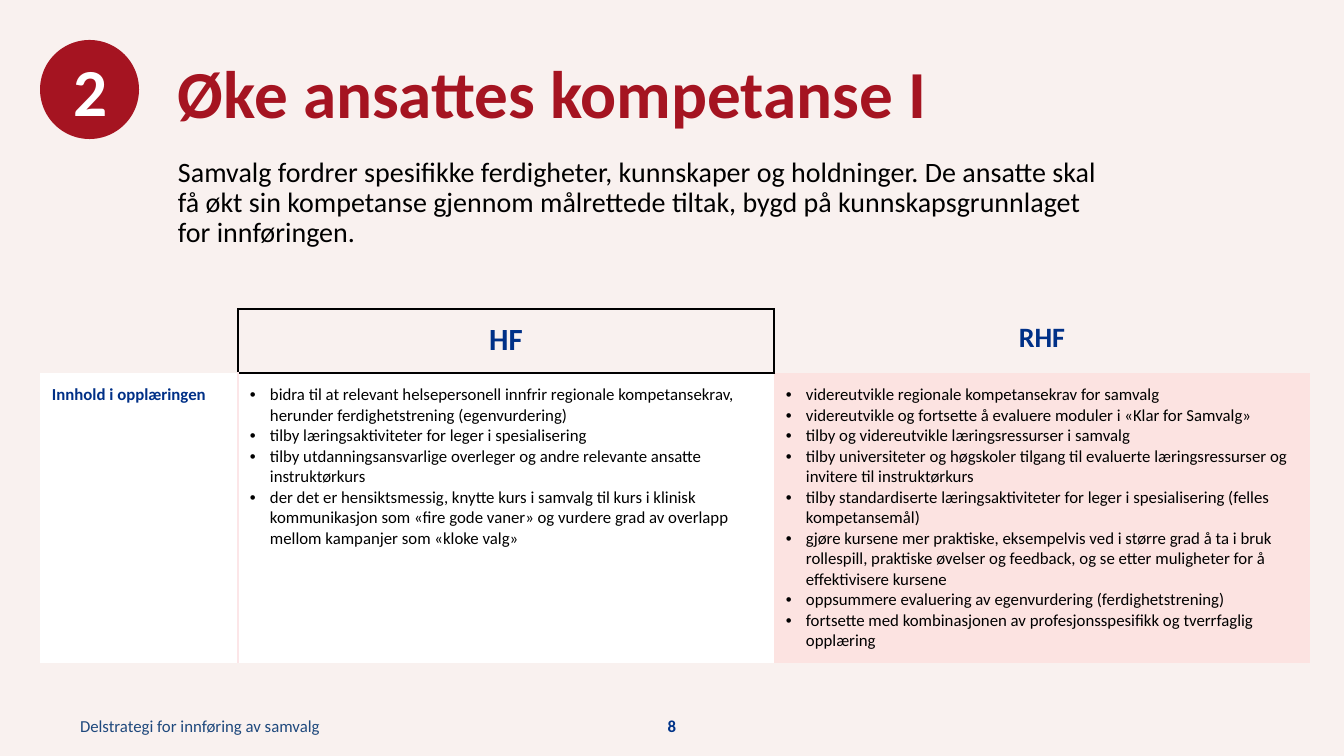
from pptx import Presentation
from pptx.dml.color import RGBColor
from pptx.enum.shapes import MSO_SHAPE
from pptx.enum.text import MSO_ANCHOR, PP_ALIGN
from pptx.oxml.ns import qn
from pptx.util import Emu, Pt
from lxml import etree

OVAL = MSO_SHAPE.OVAL
TOP, MIDDLE = MSO_ANCHOR.TOP, MSO_ANCHOR.MIDDLE
LEFT, CENTER = PP_ALIGN.LEFT, PP_ALIGN.CENTER
TITLE_ONLY = 5
SCALE = 914400 / 100.8
SIDES = "LRTB"
MARGINS = ("margin_left", "margin_top", "margin_right", "margin_bottom")
COLORS = {
    "paper": "F9F1EF", "red": "A51421", "white": "FFFFFF", "black": "000000",
    "navy": "003087", "number": "003388", "footer": "1F497D",
    "rose": "FCE3E1", "pink": "FCE6E8",
}

HF_TASKS = [
    "bidra til at relevant helsepersonell innfrir regionale kompetansekrav, herunder ferdighetstrening (egenvurdering)",
    "tilby læringsaktiviteter for leger i spesialisering",
    "tilby utdanningsansvarlige overleger og andre relevante ansatte instruktørkurs",
    "der det er hensiktsmessig, knytte kurs i samvalg til kurs i klinisk kommunikasjon som «fire gode vaner» og vurdere grad av overlapp mellom kampanjer som «kloke valg»",
]
RHF_TASKS = [
    "videreutvikle regionale kompetansekrav for samvalg",
    "videreutvikle og fortsette å evaluere moduler i «Klar for Samvalg»",
    "tilby og videreutvikle læringsressurser i samvalg",
    "tilby universiteter og høgskoler tilgang til evaluerte læringsressurser og invitere til instruktørkurs",
    "tilby standardiserte læringsaktiviteter for leger i spesialisering (felles kompetansemål)",
    "gjøre kursene mer praktiske, eksempelvis ved i større grad å ta i bruk rollespill, praktiske øvelser og feedback, og se etter muligheter for å effektivisere kursene",
    "oppsummere evaluering av egenvurdering (ferdighetstrening)",
    "fortsette med kombinasjonen av profesjonsspesifikk og tverrfaglig opplæring",
]


def px(n):
    return Emu(round(n * SCALE))


def rgb(name):
    return RGBColor.from_string(COLORS[name])


class Deck:
    """Holds the text style and the current slide, and draws its elements."""

    font = "Calibri"

    def __init__(self, width, height):
        self.prs = Presentation()
        self.prs.slide_width, self.prs.slide_height = px(width), px(height)

    def slide(self, color):
        self.s = self.prs.slides.add_slide(self.prs.slide_layouts[TITLE_ONLY])
        self.paint(self.s.background.fill, color)

    def paint(self, fill, color):
        fill.solid()
        fill.fore_color.rgb = rgb(color)

    def add_lines(self, tf, lines, size, color, bold=False, align=LEFT, spacing=1.0, bullet=False):
        for i, line in enumerate(lines):
            p = tf.paragraphs[0] if i == 0 else tf.add_paragraph()
            r = p.add_run()
            r.text = line
            layout = {"alignment": align, "line_spacing": spacing, "space_before": Pt(0)}
            for name, value in layout.items():
                setattr(p, name, value)
            if bullet:
                self.bullet(p)
            for name, value in {"name": self.font, "size": Pt(size), "bold": bold}.items():
                setattr(r.font, name, value)
            r.font.color.rgb = rgb(color)

    def bullet(self, p):
        pPr = p._p.get_or_add_pPr()
        pPr.set("marL", str(px(20)))
        pPr.set("indent", str(-px(20)))
        etree.SubElement(pPr, qn("a:buFont"), typeface="Arial")
        etree.SubElement(pPr, qn("a:buChar"), char="•")

    def frame(self, tf, margins, anchor):
        values = dict(zip(MARGINS, map(px, margins)), word_wrap=True, vertical_anchor=anchor)
        for name, value in values.items():
            setattr(tf, name, value)

    def title(self, box, text, **style):
        sp = self.s.shapes.title
        for name, value in zip(("left", "top", "width", "height"), box):
            setattr(sp, name, px(value))
        self.frame(sp.text_frame, (0, 0, 0, 0), MIDDLE)
        self.add_lines(sp.text_frame, [text], **style)

    def text(self, box, text, margins=(0, 0, 0, 0), anchor=TOP, **style):
        tf = self.s.shapes.add_textbox(*map(px, box)).text_frame
        self.frame(tf, margins, anchor)
        self.add_lines(tf, [text], **style)

    def badge(self, box, text, fill, **style):
        sp = self.s.shapes.add_shape(OVAL, *map(px, box))
        sp.shadow.inherit = False
        self.paint(sp.fill, fill)
        sp.line.fill.background()
        self.frame(sp.text_frame, (12, 5, 10, 5), MIDDLE)
        self.add_lines(sp.text_frame, [text], **style)

    def table(self, left, top, widths, heights, rows):
        box = (left, top, sum(widths), sum(heights))
        table = self.s.shapes.add_table(len(heights), len(widths), *map(px, box)).table
        table.first_row = table.horz_banding = False
        for column, width in zip(table.columns, widths):
            column.width = px(width)
        for row, height, cells in zip(table.rows, heights, rows):
            row.height = px(height)
            for cell, content in zip(row.cells, cells):
                self.cell(cell, **content)

    def cell(self, cell, fill, lines=(), borders=None, **style):
        for name in MARGINS:
            setattr(cell, name, px(12))
        self.borders(cell, borders or {})
        self.paint(cell.fill, fill)
        if lines:
            self.add_lines(cell.text_frame, lines, **style)

    def borders(self, cell, borders):
        tcPr = cell._tc.get_or_add_tcPr()
        for side in SIDES:
            ln = etree.SubElement(tcPr, qn("a:ln" + side))
            if side in borders:
                color, width = borders[side]
                ln.set("w", str(Pt(width)))
                fill = etree.SubElement(ln, qn("a:solidFill"))
                etree.SubElement(fill, qn("a:srgbClr"), val=COLORS[color])
            else:
                ln.set("w", "0")
                etree.SubElement(ln, qn("a:noFill"))


def main():
    deck = Deck(1344, 756)
    deck.slide("paper")
    deck.title((178, 57, 1090, 80), "Øke ansattes kompetanse I",
               size=48, color="red", bold=True, spacing=0.9)
    deck.badge((40, 40, 99, 99), "2", "red", size=48, color="white", bold=True, align=CENTER)
    deck.text((178, 158, 929, 110),
              "Samvalg fordrer spesifikke ferdigheter, kunnskaper og holdninger. De ansatte skal "
              "få økt sin kompetanse gjennom målrettede tiltak, bygd på kunnskapsgrunnlaget for innføringen.",
              size=20, color="black", spacing=0.9)

    black, pink = ("black", 1), ("pink", 2.25)
    heading = {"fill": "paper", "color": "navy", "bold": True, "align": CENTER}
    tasks = {"size": 12, "color": "black", "bullet": True}
    deck.table(40, 309, (198, 536, 536), (64, 290), [
        [
            {"fill": "paper", "borders": {"R": black}},
            {**heading, "lines": ["HF"], "size": 22, "borders": dict.fromkeys(SIDES, black)},
            {**heading, "lines": ["RHF"], "size": 20, "borders": {"L": black}},
        ],
        [
            {"fill": "white", "lines": ["Innhold i opplæringen"], "size": 12,
             "color": "navy", "bold": True, "borders": {"R": pink}},
            {**tasks, "fill": "white", "lines": HF_TASKS, "borders": {"L": pink, "T": black}},
            {**tasks, "fill": "rose", "lines": RHF_TASKS},
        ],
    ])

    deck.text((80, 710, 311, 32), "Delstrategi for innføring av samvalg", (0, 5, 10, 5), MIDDLE,
              size=12, color="footer")
    deck.text((628, 710, 88, 32), "8", (10, 5, 10, 5), MIDDLE,
              size=12, color="number", bold=True, align=CENTER)
    deck.prs.save("out.pptx")


if __name__ == "__main__":
    main()
